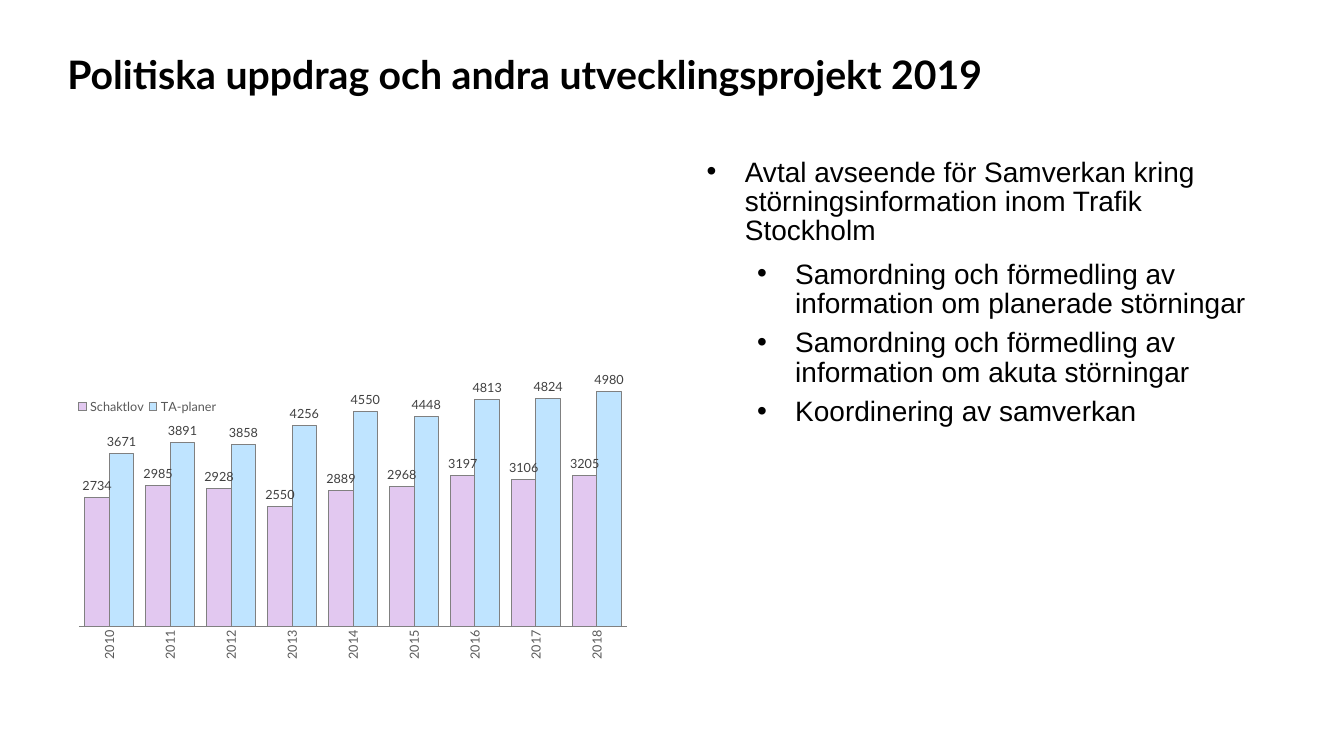
from lxml.etree import SubElement
from pptx import Presentation
from pptx.chart.data import CategoryChartData
from pptx.dml.color import RGBColor
from pptx.enum.chart import (XL_CHART_TYPE, XL_LABEL_POSITION,
                             XL_LEGEND_POSITION, XL_TICK_MARK)
from pptx.enum.text import MSO_ANCHOR, MSO_AUTO_SIZE, PP_ALIGN
from pptx.oxml import parse_xml
from pptx.oxml.ns import nsdecls, qn
from pptx.util import Cm, Pt

COLORS = {"text": "000000", "axis": "595959", "label": "404040",
          "line": "808080", "permits": "E2C8F0", "plans": "BFE4FF"}

TITLE = "Politiska uppdrag och andra utvecklingsprojekt 2019"
BULLETS = [
    (0, "Avtal avseende för Samverkan kring störningsinformation inom Trafik Stockholm"),
    (1, "Samordning och förmedling av information om planerade störningar"),
    (1, "Samordning och förmedling av information om akuta störningar"),
    (1, "Koordinering av samverkan"),
]
YEARS = [str(year) for year in range(2010, 2019)]
SERIES = [
    ("Schaktlov", "permits", (2734, 2985, 2928, 2550, 2889, 2968, 3197, 3106, 3205)),
    ("TA-planer", "plans", (3671, 3891, 3858, 4256, 4550, 4448, 4813, 4824, 4980)),
]

# Left, top, width, height in centimetres
TITLE_BOX = (1.7, 1.27, 30.48, 2.31)
BODY_BOX = (17.81, 3.99, 14.4, 11)
CHART_BOX = (1.7, 9.37, 14.4, 7.37)

# Left, top, width, height as shares of the chart
PLOT_LAYOUT = (0.02, 0.06, 0.96, 0.81)
LEGEND_LAYOUT = (0.01, 0.08, 0.26, 0.07)

TITLE_FONT = {"name": "Lato", "size": Pt(28), "bold": True}
BODY_FONT = {"name": "Arial", "size": Pt(20)}
CHART_FONT = {"name": "Lato", "size": Pt(9), "bold": False}

HANGING = Cm(0.96)
LEVEL_INDENT = Cm(1.27)
SPACE_AFTER = (Pt(6), Pt(3))


def set_attributes(target, values):
    for name, value in values.items():
        setattr(target, name, value)


def style_font(font, values, color):
    set_attributes(font, values)
    font.color.rgb = RGBColor.from_string(COLORS[color])


def style_line(line):
    line.color.rgb = RGBColor.from_string(COLORS["line"])
    line.width = Pt(0.75)


def place(shape, box):
    set_attributes(shape, dict(zip(("left", "top", "width", "height"), map(Cm, box))))


def prepare_frame(shape, box):
    place(shape, box)
    frame = shape.text_frame
    set_attributes(frame, {
        "margin_left": 0, "margin_top": 0, "margin_right": 0, "margin_bottom": 0,
        "word_wrap": True, "auto_size": MSO_AUTO_SIZE.NONE,
        "vertical_anchor": MSO_ANCHOR.TOP})
    return frame


def manual_layout(box, inner=False):
    """Return a chart layout element with the given shares of the chart."""
    target = '<c:layoutTarget val="inner"/>' if inner else ""
    modes = "".join(f'<c:{edge}Mode val="edge"/>' for edge in "xy")
    sizes = "".join(f'<c:{name} val="{share}"/>' for name, share in zip("xywh", box))
    return parse_xml(f'<c:layout {nsdecls("c")}><c:manualLayout>{target}{modes}{sizes}'
                     '</c:manualLayout></c:layout>')


def add_title(slide):
    paragraph = prepare_frame(slide.shapes.title, TITLE_BOX).paragraphs[0]
    paragraph.text = TITLE
    paragraph.alignment = PP_ALIGN.LEFT
    style_font(paragraph.font, TITLE_FONT, "text")


def add_bullets(slide):
    frame = prepare_frame(slide.placeholders[1], BODY_BOX)
    for index, (level, text) in enumerate(BULLETS):
        paragraph = frame.add_paragraph() if index else frame.paragraphs[0]
        set_attributes(paragraph, {
            "text": text, "level": level, "alignment": PP_ALIGN.LEFT,
            "line_spacing": Pt(21), "space_before": Pt(4 if index else 0),
            "space_after": SPACE_AFTER[level]})
        properties = paragraph._p.get_or_add_pPr()
        properties.set("marL", str(HANGING + level * LEVEL_INDENT))
        properties.set("indent", str(-HANGING))
        SubElement(properties, qn("a:buFont")).set("typeface", "Arial")
        SubElement(properties, qn("a:buChar")).set("char", "•")
        style_font(paragraph.font, BODY_FONT, "text")


def add_permit_chart(slide):
    data = CategoryChartData()
    data.categories = YEARS
    for name, _, values in SERIES:
        data.add_series(name, values)
    chart = slide.shapes.add_chart(
        XL_CHART_TYPE.COLUMN_CLUSTERED, *map(Cm, CHART_BOX), data).chart
    chart.has_title = False
    style_font(chart.font, {"name": "Arial", "size": Pt(10)}, "text")

    plot = chart.plots[0]
    set_attributes(plot, {"gap_width": 50, "overlap": 0, "vary_by_categories": False})
    for series, (_, color, _) in zip(plot.series, SERIES):
        series.format.fill.solid()
        series.format.fill.fore_color.rgb = RGBColor.from_string(COLORS[color])
        style_line(series.format.line)
        labels = series.data_labels
        set_attributes(labels, {"show_value": True,
                                "position": XL_LABEL_POSITION.OUTSIDE_END})
        style_font(labels.font, CHART_FONT, "label")

    set_attributes(chart.value_axis, {
        "visible": False, "has_major_gridlines": False,
        "minimum_scale": 0, "maximum_scale": 5000})
    axis = chart.category_axis
    set_attributes(axis, {"major_tick_mark": XL_TICK_MARK.NONE,
                          "minor_tick_mark": XL_TICK_MARK.NONE,
                          "has_major_gridlines": False})
    style_line(axis.format.line)
    style_font(axis.tick_labels.font, CHART_FONT, "axis")
    text_body = axis._element.find(qn("c:txPr")).find(qn("a:bodyPr"))
    text_body.set("rot", "-5400000")
    text_body.set("vert", "horz")

    chart.has_legend = True
    legend = chart.legend
    set_attributes(legend, {"position": XL_LEGEND_POSITION.CORNER,
                            "include_in_layout": True})
    style_font(legend.font, CHART_FONT, "axis")
    for old_layout in legend._element.findall(qn("c:layout")):
        legend._element.remove(old_layout)
    legend._element.find(qn("c:legendPos")).addnext(manual_layout(LEGEND_LAYOUT))

    plot_area = chart._chartSpace.chart.plotArea
    for old_layout in plot_area.findall(qn("c:layout")):
        plot_area.remove(old_layout)
    plot_area.insert(0, manual_layout(PLOT_LAYOUT, inner=True))


def main():
    presentation = Presentation()
    presentation.slide_width = Cm(33.87)
    presentation.slide_height = Cm(19.05)
    slide = presentation.slides.add_slide(presentation.slide_layouts[1])
    add_title(slide)
    add_bullets(slide)
    add_permit_chart(slide)
    presentation.save("out.pptx")


if __name__ == "__main__":
    main()
